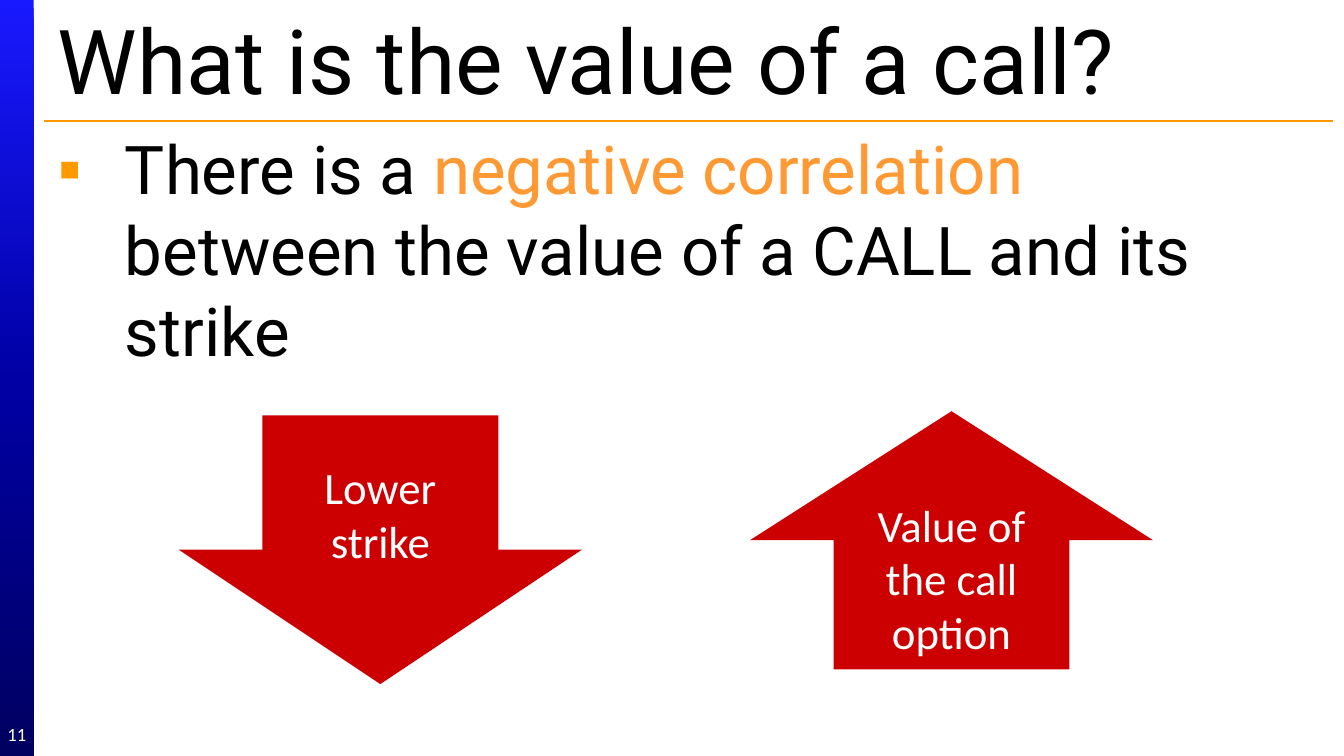
"""Build a slide on how the strike affects the value of a call option."""
from lxml import etree
from pptx import Presentation
from pptx import util as u
from pptx.dml.color import RGBColor
from pptx.enum import shapes, text
from pptx.oxml import ns

COLORS = {"ink": "000000", "accent": "FF9933", "rule": "FF9900",
          "arrow": "CC0000", "white": "FFFFFF"}
BAND_STOPS = [(0, "1919FF"), (50, "0000A5"), (100, "000060")]
WIDTH = 10
HEIGHT = WIDTH * 9 / 16
BAND, LEFT, RULE_Y = 0.25, 0.33, 0.9

TITLE = "What is the value of a call?"
BODY = [("There is a ", "ink"), ("negative correlation ", "accent"),
        ("between the value of a CALL and its strike", "ink")]
NUMBER = "11"
BLOCKS = [
    ("UP_ARROW", (5.58, 3.06, 3, 1.92), 0, "Value of the call option"),
    ("UP_ARROW", (1.33, 3.09, 3, 2), 180, ""),
    ("RECTANGLE", (2.04, 3.32, 1.58, 1), 0, "Lower strike"),
]


def color(name):
    return RGBColor.from_string(COLORS[name])


def inches(box):
    return [u.Inches(length) for length in box]


def place(shape, box):
    shape.left, shape.top, shape.width, shape.height = inches(box)


def add_xml(parent, tag, **attributes):
    return etree.SubElement(parent, ns.qn(tag), attributes)


def style(paragraph, size, font, name, align):
    paragraph.alignment = align
    paragraph.font.size = u.Pt(size)
    paragraph.font.name = font
    if name:
        paragraph.font.color.rgb = color(name)


def write(shape, words, size, font, name, align):
    frame = shape.text_frame
    frame.word_wrap = True
    frame.auto_size = text.MSO_AUTO_SIZE.NONE
    frame.vertical_anchor = text.MSO_ANCHOR.MIDDLE
    frame.text = words
    style(frame.paragraphs[0], size, font, name, align)


def add_block(slide, kind, box):
    shape = slide.shapes.add_shape(shapes.MSO_SHAPE[kind], *inches(box))
    shape.shadow.inherit = False
    shape.line.fill.background()
    return shape


def add_band(slide):
    band = add_block(slide, "RECTANGLE", (0, 0, BAND, HEIGHT))
    band.fill.gradient()
    gradient = band.element.spPr.find(ns.qn("a:gradFill"))
    for child in list(gradient):
        gradient.remove(child)
    stops = add_xml(gradient, "a:gsLst")
    for position, value in BAND_STOPS:
        stop = add_xml(stops, "a:gs", pos=str(position * 1000))
        add_xml(stop, "a:srgbClr", val=value)
    add_xml(gradient, "a:lin", ang="5400000", scaled="0")


def add_rule(slide):
    rule = slide.shapes.add_connector(
        shapes.MSO_CONNECTOR.STRAIGHT, *inches((LEFT, RULE_Y, 9.92, RULE_Y)))
    rule.line.color.rgb = color("rule")
    rule.line.width = u.Pt(0.75)
    add_xml(rule.element.spPr, "a:effectLst")


def fill_body(body):
    place(body, (LEFT, RULE_Y, 9.33, 4.33))
    body.text_frame.auto_size = text.MSO_AUTO_SIZE.NONE
    paragraph = body.text_frame.paragraphs[0]
    properties = paragraph._p.get_or_add_pPr()
    properties.set("marL", str(u.Inches(0.5)))
    properties.set("indent", str(-u.Inches(0.5)))
    add_xml(add_xml(properties, "a:buClr"), "a:srgbClr", val=COLORS["rule"])
    add_xml(properties, "a:buFont", typeface="Arial")
    add_xml(properties, "a:buChar", char="▪")
    for words, name in BODY:
        run = paragraph.add_run()
        run.text = words
        run.font.color.rgb = color(name)
    style(paragraph, 36, "Roboto", None, text.PP_ALIGN.LEFT)


def add_number(slide):
    number = slide.shapes.add_textbox(*inches((0, 5.31, BAND, 0.3)))
    write(number, NUMBER, 10, "Calibri", "white", text.PP_ALIGN.CENTER)
    frame = number.text_frame
    frame.margin_left = frame.margin_right = 0
    frame.margin_top = frame.margin_bottom = 0


def add_arrows(slide):
    for kind, box, rotation, words in BLOCKS:
        shape = add_block(slide, kind, box)
        shape.fill.solid()
        shape.fill.fore_color.rgb = color("arrow")
        shape.rotation = rotation
        if kind == "UP_ARROW":
            shape.adjustments[0], shape.adjustments[1] = 0.585, 0.5
        if words:
            write(shape, words, 24, "Calibri", "white", text.PP_ALIGN.CENTER)


def main():
    presentation = Presentation()
    presentation.slide_width, presentation.slide_height = inches((WIDTH, HEIGHT))
    slide = presentation.slides.add_slide(presentation.slide_layouts[1])
    add_band(slide)
    add_rule(slide)
    title, body = slide.placeholders
    place(title, (LEFT, 0.06, 9.58, 0.75))
    write(title, TITLE, 48, "Roboto", "ink", text.PP_ALIGN.LEFT)
    fill_body(body)
    add_number(slide)
    add_arrows(slide)
    presentation.save("out.pptx")


if __name__ == "__main__":
    main()
